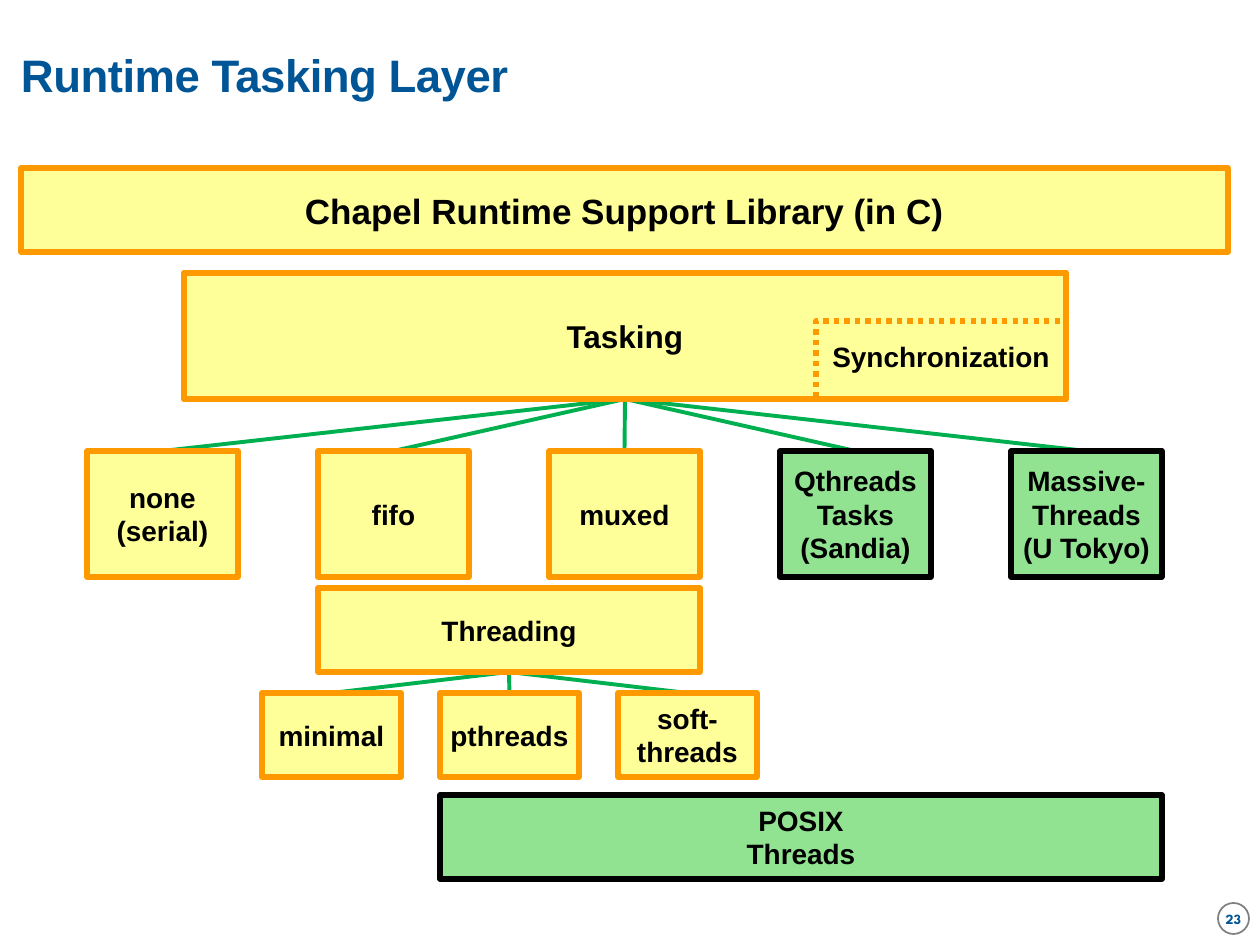
from lxml.etree import SubElement
from pptx import Presentation
from pptx.dml.color import RGBColor
from pptx.enum.dml import MSO_LINE
from pptx.enum.shapes import MSO_CONNECTOR, MSO_SHAPE
from pptx.enum.text import MSO_ANCHOR, MSO_AUTO_SIZE, PP_ALIGN
from pptx.oxml.ns import qn
from pptx.util import Emu, Pt

TITLE = "Runtime Tasking Layer"
PAGE_NUMBER = "23"
BLUE, BLACK, GREEN_LINE = "005596", "000000", "00B050"
CHAPEL = ("FFFF99", "FF9900")
EXTERNAL = ("91E391", "000000")

LIBRARY = ("Chapel Runtime Support Library (in C)", (21, 168, 1207, 84), 20)
TASKING = ("Tasking", (184, 273, 882, 126), 18)
SYNCHRONIZATION = ("Synchronization", (816, 321, 250, 78), 16)
THREADING = ("Threading", (318, 588, 382, 84), 16)
POSIX = ("POSIX\nThreads", (440, 795, 722, 84), 16)

TASKING_CHOICES = [
    ("none\n(serial)", CHAPEL),
    ("fifo", CHAPEL),
    ("muxed", CHAPEL),
    ("Qthreads\nTasks\n(Sandia)", EXTERNAL),
    ("Massive-\nThreads\n(U Tokyo)", EXTERNAL),
]
THREADING_CHOICES = [
    ("minimal", CHAPEL),
    ("pthreads", CHAPEL),
    ("soft-\vthreads", CHAPEL),
]
TASKING_GRID = (87, 451, 151, 126, 231)
THREADING_GRID = (262, 693, 139, 84, 178)


def px(value):
    return Emu(round(value * 914400 / 126))


def color(value):
    return RGBColor.from_string(value)


def place(shape, box):
    shape.left, shape.top, shape.width, shape.height = map(px, box)


def set_margins(frame, horizontal, top, bottom):
    frame.margin_left = frame.margin_right = px(horizontal)
    frame.margin_top, frame.margin_bottom = px(top), px(bottom)


def add_run(paragraph, text, size, text_color, font_name="Arial"):
    run = paragraph.add_run()
    run.text = text
    run.font.name = font_name
    run.font.size = Pt(size)
    run.font.bold = True
    run.font.color.rgb = color(text_color)
    return run


def add_outline(slide, box, line_color, width=3, kind=MSO_SHAPE.RECTANGLE):
    shape = slide.shapes.add_shape(kind, *map(px, box))
    shape.shadow.inherit = False
    shape.fill.background()
    shape.line.color.rgb = color(line_color)
    shape.line.width = Pt(width)
    return shape


def add_box(slide, text, box, size, style=CHAPEL):
    fill_color, line_color = style
    shape = add_outline(slide, box, line_color)
    shape.fill.solid()
    shape.fill.fore_color.rgb = color(fill_color)
    frame = shape.text_frame
    frame.word_wrap = False
    frame.vertical_anchor = MSO_ANCHOR.MIDDLE
    set_margins(frame, 13, 6, 6)
    for index, line in enumerate(text.split("\n")):
        paragraph = frame.add_paragraph() if index else frame.paragraphs[0]
        paragraph.alignment = PP_ALIGN.CENTER
        for part_index, part in enumerate(line.split("\v")):
            if part_index:
                paragraph.add_line_break()
            add_run(paragraph, part, size, BLACK)
    return shape


def add_row(slide, choices, grid):
    left, top, width, height, step = grid
    return [
        add_box(slide, text, (left + index * step, top, width, height), 16, style)
        for index, (text, style) in enumerate(choices)
    ]


def add_branches(slide, count):
    branches = []
    for _ in range(count):
        connector = slide.shapes.add_connector(MSO_CONNECTOR.STRAIGHT, 0, 0, 0, 0)
        connector.line.color.rgb = color(GREEN_LINE)
        connector.line.width = Pt(2.25)
        SubElement(connector._element.spPr, qn("a:effectLst"))
        branches.append(connector)
    return branches


def join(branches, parent, children):
    for connector, child in zip(branches, children):
        connector.begin_connect(parent, 2)
        connector.end_connect(child, 0)


def add_title(slide):
    title = slide.shapes.title
    place(title, (21, 21, 1008, 116))
    frame = title.text_frame
    frame.auto_size = MSO_AUTO_SIZE.NONE
    frame.vertical_anchor = MSO_ANCHOR.MIDDLE
    set_margins(frame, 0, 0, 0)
    paragraph = frame.paragraphs[0]
    paragraph.alignment = PP_ALIGN.LEFT
    paragraph.line_spacing = 0.85
    run = add_run(paragraph, TITLE, 26, BLUE)
    run.font._element.set("spc", "-30")


def add_page_number(slide):
    badge = add_outline(slide, (1218, 903, 31, 31), "808080", 1, MSO_SHAPE.OVAL)
    badge.fill.solid()
    badge.fill.fore_color.rgb = color("FFFFFF")
    frame = badge.text_frame
    frame.vertical_anchor = MSO_ANCHOR.MIDDLE
    set_margins(frame, 0, 0, 0)
    paragraph = frame.paragraphs[0]
    paragraph.alignment = PP_ALIGN.CENTER
    add_run(paragraph, PAGE_NUMBER, 8, BLUE, "League Spartan")


def main():
    """Build the runtime tasking layer slide."""
    presentation = Presentation()
    presentation.slide_width, presentation.slide_height = px(1260), px(945)
    slide = presentation.slides.add_slide(presentation.slide_layouts[5])
    add_title(slide)
    add_page_number(slide)

    tasking_branches = add_branches(slide, len(TASKING_CHOICES))
    threading_branches = add_branches(slide, len(THREADING_CHOICES))
    add_box(slide, *LIBRARY)
    tasking = add_box(slide, *TASKING)
    synchronization = add_box(slide, *SYNCHRONIZATION)
    synchronization.line.dash_style = MSO_LINE.ROUND_DOT
    set_margins(synchronization.text_frame, 13, 6, 13)
    add_outline(slide, TASKING[1], CHAPEL[1])
    tasking_row = add_row(slide, TASKING_CHOICES, TASKING_GRID)
    threading = add_box(slide, *THREADING)
    threading_row = add_row(slide, THREADING_CHOICES, THREADING_GRID)
    add_box(slide, *POSIX, EXTERNAL)
    join(tasking_branches, tasking, tasking_row)
    join(threading_branches, threading, threading_row)
    presentation.save("out.pptx")


if __name__ == "__main__":
    main()
